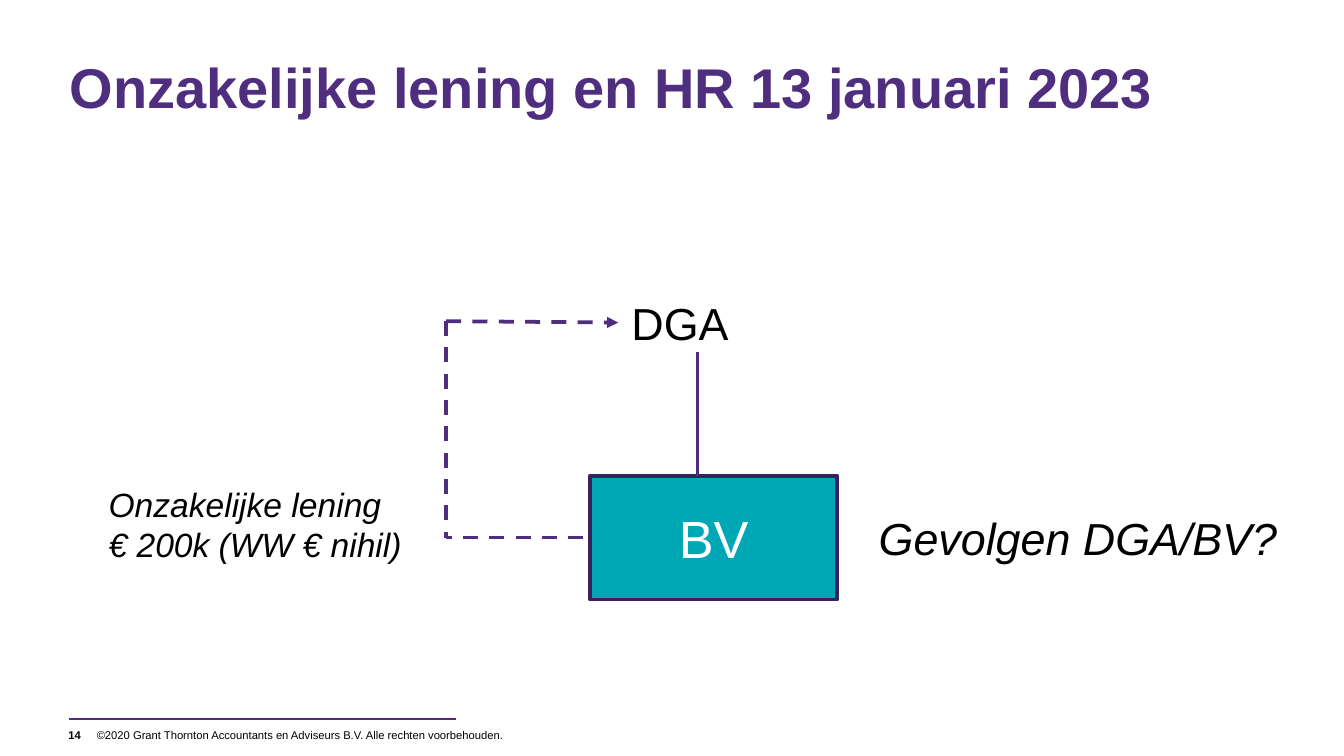
from dataclasses import dataclass
from typing import Optional

from lxml.etree import SubElement
from pptx import Presentation
from pptx.dml.color import RGBColor
from pptx.enum.dml import MSO_LINE_DASH_STYLE as Dash
from pptx.enum.shapes import MSO_CONNECTOR as Connector, MSO_SHAPE as Shape
from pptx.enum.text import MSO_ANCHOR as Anchor, PP_ALIGN as Align
from pptx.oxml.ns import qn
from pptx.util import Inches, Pt


@dataclass(frozen=True)
class Theme:
    font: str = "Arial"
    purple: str = "4F2D7F"
    dark_purple: str = "3A215E"
    teal: str = "00A7B5"
    black: str = "000000"
    white: str = "FFFFFF"
    title: float = 30
    entity: float = 28
    large: float = 24
    body: float = 18
    footer: float = 6
    line: float = 2
    rule: float = 1.5


@dataclass(frozen=True)
class Area:
    left: float
    top: float
    width: float
    height: float


@dataclass(frozen=True)
class Label:
    area: Area
    text: str
    size: float
    bold: bool = False
    italic: bool = False
    anchor: Anchor = Anchor.TOP
    margins: tuple[float, float] = (0.1, 0.05)


@dataclass(frozen=True)
class Line:
    start: tuple[float, float]
    end: tuple[float, float]
    width: float
    dashed: bool = False
    arrow: bool = False


THEME = Theme()
PAGE_WIDTH = Inches(10)
PAGE_HEIGHT = PAGE_WIDTH * 9 // 16
LOAN_LEFT, LOAN_TOP, LOAN_BOTTOM = 3.32, 2.39, 4
OWNER_X = 5.19

TITLE_AREA = Area(0.52, 0.39, 8.97, 0.92)
COMPANY_AREA = Area(4.39, 3.54, 1.84, 0.92)

LABELS = [
    Label(Area(0.72, 5.37, 3.29, 0.2),
          "©2020 Grant Thornton Accountants en Adviseurs B.V. Alle rechten voorbehouden.",
          THEME.footer, anchor=Anchor.MIDDLE, margins=(0, 0.05)),
    Label(Area(0.51, 5.37, 0.2, 0.2), "14", THEME.footer, bold=True,
          anchor=Anchor.MIDDLE, margins=(0, 0)),
    Label(Area(4.6, 2.15, 1.84, 0.5), "DGA", THEME.large),
    Label(Area(0.71, 3.55, 2.55, 0.71), "Onzakelijke lening\n€ 200k (WW € nihil)",
          THEME.body, italic=True),
    Label(Area(6.44, 3.75, 3.2, 0.5), "Gevolgen DGA/BV?", THEME.large, italic=True),
]

LINES = [
    Line((0.51, 5.35), (3.39, 5.35), THEME.rule),
    Line((OWNER_X, COMPANY_AREA.top), (OWNER_X, 2.62), THEME.line),
    Line((4.34, LOAN_BOTTOM), (LOAN_LEFT, LOAN_BOTTOM), THEME.line, dashed=True),
    Line((LOAN_LEFT, LOAN_TOP), (LOAN_LEFT, LOAN_BOTTOM), THEME.line, dashed=True),
    Line((LOAN_LEFT, LOAN_TOP), (4.6, 2.4), THEME.line, dashed=True, arrow=True),
]


def color(value: str) -> RGBColor:
    return RGBColor.from_string(value)


def lengths(area: Area) -> tuple[Inches, ...]:
    return tuple(Inches(v) for v in (area.left, area.top, area.width, area.height))


def write(box, text: str, *, size: float, ink: str = THEME.black, bold: bool = False,
          italic: bool = False, align: Optional[Align] = Align.LEFT,
          anchor: Anchor = Anchor.TOP, margins: tuple[float, float] = (0.1, 0.05)) -> None:
    frame = box.text_frame
    frame.text = text
    frame.word_wrap = True
    frame.vertical_anchor = anchor
    frame.margin_left = frame.margin_right = Inches(margins[0])
    frame.margin_top = frame.margin_bottom = Inches(margins[1])
    for para in frame.paragraphs:
        para.alignment = align
        for span in para.runs:
            span.font.name = THEME.font
            span.font.size = Pt(size)
            span.font.bold = bold
            span.font.italic = italic
            span.font.color.rgb = color(ink)


def draw_title(page) -> None:
    title = page.shapes.title
    title.left, title.top, title.width, title.height = lengths(TITLE_AREA)
    write(title, "Onzakelijke lening en HR 13 januari 2023", size=THEME.title,
          ink=THEME.purple, bold=True, margins=(0, 0))


def draw_company(page) -> None:
    box = page.shapes.add_shape(Shape.RECTANGLE, *lengths(COMPANY_AREA))
    box.shadow.inherit = False
    box.fill.solid()
    box.fill.fore_color.rgb = color(THEME.teal)
    box.line.color.rgb = color(THEME.dark_purple)
    box.line.width = Pt(THEME.line)
    write(box, "BV", size=THEME.entity, ink=THEME.white, align=Align.CENTER,
          anchor=Anchor.MIDDLE)


def draw_label(page, label: Label) -> None:
    box = page.shapes.add_textbox(*lengths(label.area))
    write(box, label.text, size=label.size, bold=label.bold, italic=label.italic,
          anchor=label.anchor, margins=label.margins)


def draw_line(page, line: Line) -> None:
    points = (Inches(v) for v in (*line.start, *line.end))
    connector = page.shapes.add_connector(Connector.STRAIGHT, *points)
    connector.line.color.rgb = color(THEME.purple)
    connector.line.width = Pt(line.width)
    properties = connector.element.spPr
    if line.dashed:
        connector.line.dash_style = Dash.DASH
    if line.arrow:
        SubElement(properties.find(qn("a:ln")), qn("a:tailEnd"), type="triangle")
    SubElement(properties, qn("a:effectLst"))


def main() -> None:
    deck = Presentation()
    deck.slide_width, deck.slide_height = PAGE_WIDTH, PAGE_HEIGHT
    page = deck.slides.add_slide(deck.slide_layouts[5])
    draw_title(page)
    draw_company(page)
    for label in LABELS:
        draw_label(page, label)
    for line in LINES:
        draw_line(page, line)
    deck.save("out.pptx")


if __name__ == "__main__":
    main()
